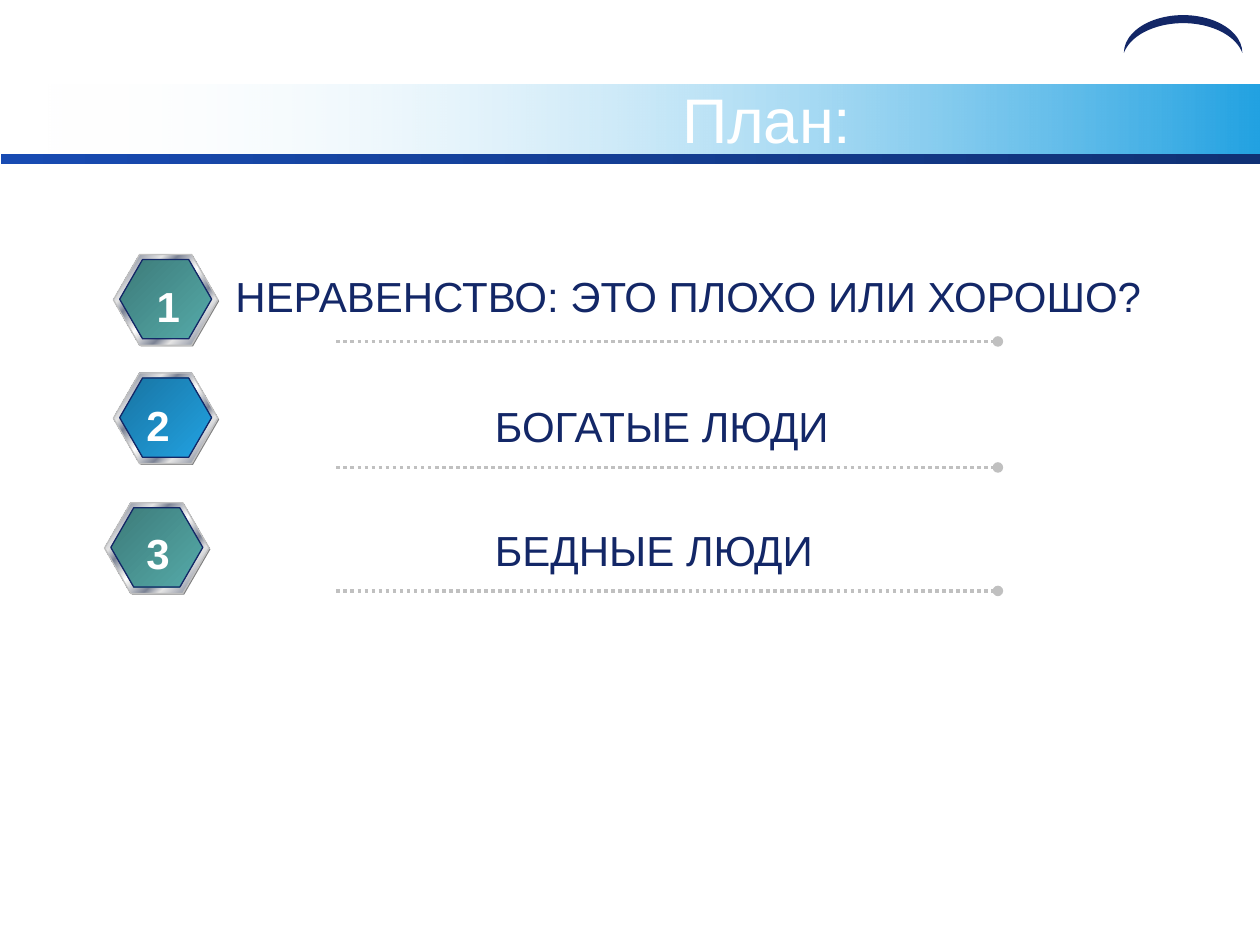
import pptx
import pptx.dml.color
import pptx.enum.dml
import pptx.enum.shapes
import pptx.enum.text
import pptx.oxml
import pptx.oxml.ns
import pptx.util
from pptx.util import Inches

SHAPES = pptx.enum.shapes.MSO_SHAPE
ALIGN = pptx.enum.text.PP_ALIGN
NAVY, WHITE, SILVER = "132767", "FFFFFF", "C0C0C0"
TEAL = [(0, "3D7A79"), (100, "55ABA9")]
BLUE = [(0, "1874A2"), (100, "22A2E2")]
METAL = [(0, "E6E6E6"), (8, "7D8496"), (26, "E6E6E6"), (34, "7D8496"),
         (46, "E6E6E6"), (50, "FFFFFF"), (54, "E6E6E6"), (66, "7D8496"),
         (74, "E6E6E6"), (92, "7D8496"), (100, "E6E6E6")]

# number, badge position, number position, wording, wording position, rule height
PLAN = [
    ("1", (0.9, 2.02), (1.14, 2.18), TEAL,
     "НЕРАВЕНСТВО: ЭТО ПЛОХО ИЛИ ХОРОШО?", (1.77, 2.1, 7.49), 2.71),
    ("2", (0.9, 2.96), (1.06, 3.12), BLUE,
     "БОГАТЫЕ ЛЮДИ", (3.83, 3.13, 2.91), 3.71),
    ("3", (0.83, 3.99), (1.06, 4.14), TEAL,
     "БЕДНЫЕ ЛЮДИ", (3.83, 4.11, 2.74), 4.69),
]


def rgb(color):
    return pptx.dml.color.RGBColor.from_string(color)


def fill_gradient(shape, stops, angle, clear_start=False):
    """Fill with (percent, colour) stops; the angle runs clockwise in degrees."""
    shape.fill.gradient()
    gradient = shape.element.spPr.find(pptx.oxml.ns.qn("a:gradFill"))
    marks = ""
    for percent, color in stops:
        alpha = '<a:alpha val="0"/>' if clear_start and percent == 0 else ""
        marks += (f'<a:gs pos="{percent * 1000}"><a:srgbClr val="{color}">'
                  f'{alpha}</a:srgbClr></a:gs>')
    gradient.getparent().replace(gradient, pptx.oxml.parse_xml(
        f'<a:gradFill {pptx.oxml.ns.nsdecls("a")} rotWithShape="1">'
        f'<a:gsLst>{marks}</a:gsLst>'
        f'<a:lin ang="{angle * 60000}" scaled="0"/></a:gradFill>'))


def add_plain_shape(parent, kind, left, top, width, height, fill, line=None,
                    angle=0, clear_start=False):
    shape = parent.shapes.add_shape(kind, Inches(left), Inches(top),
                                    Inches(width), Inches(height))
    shape.shadow.inherit = False
    if isinstance(fill, str):
        shape.fill.solid()
        shape.fill.fore_color.rgb = rgb(fill)
    else:
        fill_gradient(shape, fill, angle, clear_start)
    if line:
        shape.line.color.rgb = rgb(line)
        shape.line.width = pptx.util.Pt(0.75)
    else:
        shape.line.fill.background()
    return shape


def format_text(frame, text, size, color, align, bold=False):
    frame.text = text
    paragraph = frame.paragraphs[0]
    paragraph.alignment = align
    font = paragraph.runs[0].font
    font.name = "Arial"
    font.size = pptx.util.Pt(size)
    font.bold = bold
    font.color.rgb = rgb(color)


def add_label(slide, left, top, width, text, color, align, bold=False):
    label = slide.shapes.add_textbox(Inches(left), Inches(top),
                                     Inches(width), Inches(0.5))
    label.text_frame.word_wrap = False
    format_text(label.text_frame, text, 24, color, align, bold)


def add_badge(slide, left, top, face):
    """Group a grey shade, a metal rim and a coloured face."""
    badge = slide.shapes.add_group_shape()
    layers = [(0.01, 0.01, 0.83, 0.72, "808080", None),
              (0, 0, 0.83, 0.72, METAL, SILVER),
              (0.05, 0.04, 0.73, 0.63, face, NAVY)]
    for dx, dy, width, height, fill, line in layers:
        hexagon = add_plain_shape(badge, SHAPES.HEXAGON, left + dx, top + dy,
                                  width, height, fill, line, angle=45)
        hexagon.adjustments[0] = 0.289


def add_dotted_rule(slide, y):
    rule = slide.shapes.add_connector(
        pptx.enum.shapes.MSO_CONNECTOR.STRAIGHT,
        Inches(2.67), Inches(y), Inches(7.92), Inches(y))
    rule.line.color.rgb = rgb(SILVER)
    rule.line.width = pptx.util.Pt(2)
    rule.line.dash_style = pptx.enum.dml.MSO_LINE.ROUND_DOT
    namespace = pptx.oxml.ns.nsdecls("a")
    properties = rule.element.spPr
    properties.find(pptx.oxml.ns.qn("a:ln")).append(
        pptx.oxml.parse_xml(f'<a:tailEnd {namespace} type="oval"/>'))
    properties.append(pptx.oxml.parse_xml(f"<a:effectLst {namespace}/>"))


def add_header(slide):
    add_plain_shape(slide, SHAPES.RECTANGLE, 0.33, 0.67, 9.67, 0.58,
                    [(0, WHITE), (100, "22A2E2")], clear_start=True)
    add_plain_shape(slide, SHAPES.RECTANGLE, 0.01, 1.22, 9.99, 0.08,
                    [(0, "184BB2"), (100, "103175")])
    arc = add_plain_shape(slide, SHAPES.MOON, 9.24, -0.2, 0.3, 0.94, NAVY)
    arc.rotation = 90
    arc.adjustments[0] = 0.212


def place_title(slide, text):
    title = slide.shapes.title
    title.left, title.top = Inches(2.67), Inches(0.67)
    title.width, title.height = Inches(6.83), Inches(0.53)
    title.text_frame.vertical_anchor = pptx.enum.text.MSO_ANCHOR.MIDDLE
    format_text(title.text_frame, text, 36, WHITE, ALIGN.CENTER)
    slide.shapes.element.append(title.element)  # in front of the header band


def main():
    deck = pptx.Presentation()
    deck.slide_width, deck.slide_height = Inches(10), Inches(7.5)
    slide = deck.slides.add_slide(deck.slide_layouts[5])
    add_header(slide)
    place_title(slide, "План:")
    for number, badge_at, number_at, face, topic, topic_at, rule_y in PLAN:
        add_badge(slide, *badge_at, face)
        add_dotted_rule(slide, rule_y)
        add_label(slide, *topic_at, topic, NAVY, ALIGN.LEFT)
        add_label(slide, *number_at, 0.39, number, WHITE, ALIGN.CENTER, bold=True)
    deck.save("out.pptx")


if __name__ == "__main__":
    main()
